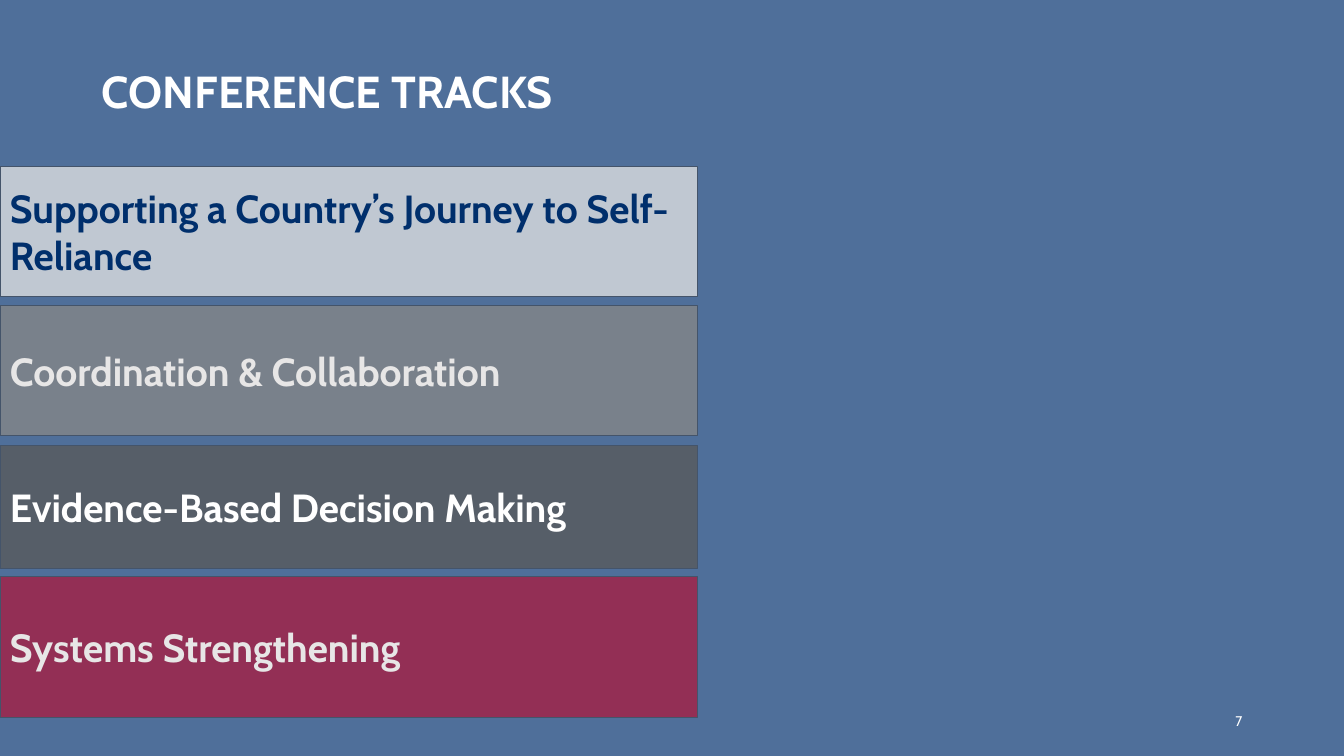
from lxml.etree import SubElement
from pptx import Presentation
from pptx.dml.color import RGBColor
from pptx.enum.shapes import MSO_SHAPE
from pptx.enum.text import MSO_ANCHOR, MSO_AUTO_SIZE, PP_ALIGN
from pptx.oxml.ns import qn
from pptx.util import Inches, Pt

FONT = "Cabin"
WHITE, NAVY, PALE = "FFFFFF", "002F6C", "E7E6E6"
BACKDROP, OUTLINE = "4F6F9A", "44546A"

# Track name, top, height, fill, opacity in percent, text colour
TRACKS = [
    ("Supporting a Country’s Journey to Self-Reliance", 1.65, 1.29, PALE, 75, NAVY),
    ("Coordination & Collaboration", 3.03, 1.29, "8C8985", 70, PALE),
    ("Evidence-Based Decision Making", 4.42, 1.22, "595959", 77, WHITE),
    ("Systems Strengthening", 5.72, 1.4, "BA0C2F", 64, PALE),
]


def colour(value):
    return RGBColor.from_string(value)


def set_frame(frame, anchor, left, vertical):
    frame.word_wrap = True
    frame.auto_size = MSO_AUTO_SIZE.NONE
    frame.vertical_anchor = anchor
    frame.margin_left, frame.margin_right = Inches(left), Inches(0.1)
    frame.margin_top = frame.margin_bottom = Inches(vertical)


def write(frame, text, size, ink, bold=True, align=PP_ALIGN.LEFT):
    para = frame.paragraphs[0]
    para.alignment = align
    span = para.add_run()
    span.text = text
    span.font.name, span.font.size, span.font.bold = FONT, Pt(size), bold
    span.font.color.rgb = colour(ink)
    return para


def place(shape, left, top, width, height):
    shape.left, shape.top = Inches(left), Inches(top)
    shape.width, shape.height = Inches(width), Inches(height)


def add_heading(page, left, top, width, height):
    heading = page.shapes.title
    place(heading, left, top, width, height)
    set_frame(heading.text_frame, MSO_ANCHOR.TOP, 0, 0.05)
    para = write(heading.text_frame, "CONFERENCE TRACKS", 32, WHITE)
    para.line_spacing = 1.3


def add_track(page, left, top, width, height, name, fill, opacity, ink):
    band = page.shapes.add_shape(MSO_SHAPE.RECTANGLE, Inches(left), Inches(top),
                                 Inches(width), Inches(height))
    band.shadow.inherit = False
    band.fill.solid()
    band.fill.fore_color.rgb = colour(fill)
    # Let the backdrop show through the band
    tint = band.fill._xPr.find(qn("a:solidFill"))[0]
    SubElement(tint, qn("a:alpha")).set("val", str(opacity * 1000))
    band.line.color.rgb = colour(OUTLINE)
    band.line.width = Pt(0.75)
    set_frame(band.text_frame, MSO_ANCHOR.MIDDLE, 0.1, 0.1)
    write(band.text_frame, name, 28, ink)


def add_tracks(page, left, width):
    for name, top, height, fill, opacity, ink in TRACKS:
        add_track(page, left, top, width, height, name, fill, opacity, ink)


def add_page_number(page, left, top, width, height):
    box = page.shapes.add_textbox(Inches(left), Inches(top), Inches(width), Inches(height))
    set_frame(box.text_frame, MSO_ANCHOR.MIDDLE, 0.1, 0.05)
    write(box.text_frame, "7", 10, WHITE, bold=False, align=PP_ALIGN.RIGHT)


def main():
    deck = Presentation()
    deck.slide_width, deck.slide_height = Inches(13.33), Inches(7.5)
    page = deck.slides.add_slide(deck.slide_layouts[5])
    page.background.fill.solid()
    page.background.fill.fore_color.rgb = colour(BACKDROP)
    add_heading(page, 1.01, 0.42, 4.89, 1.22)
    add_tracks(page, 0, 6.92)
    add_page_number(page, 9.42, 6.95, 3, 0.4)
    deck.save("out.pptx")


if __name__ == "__main__":
    main()
